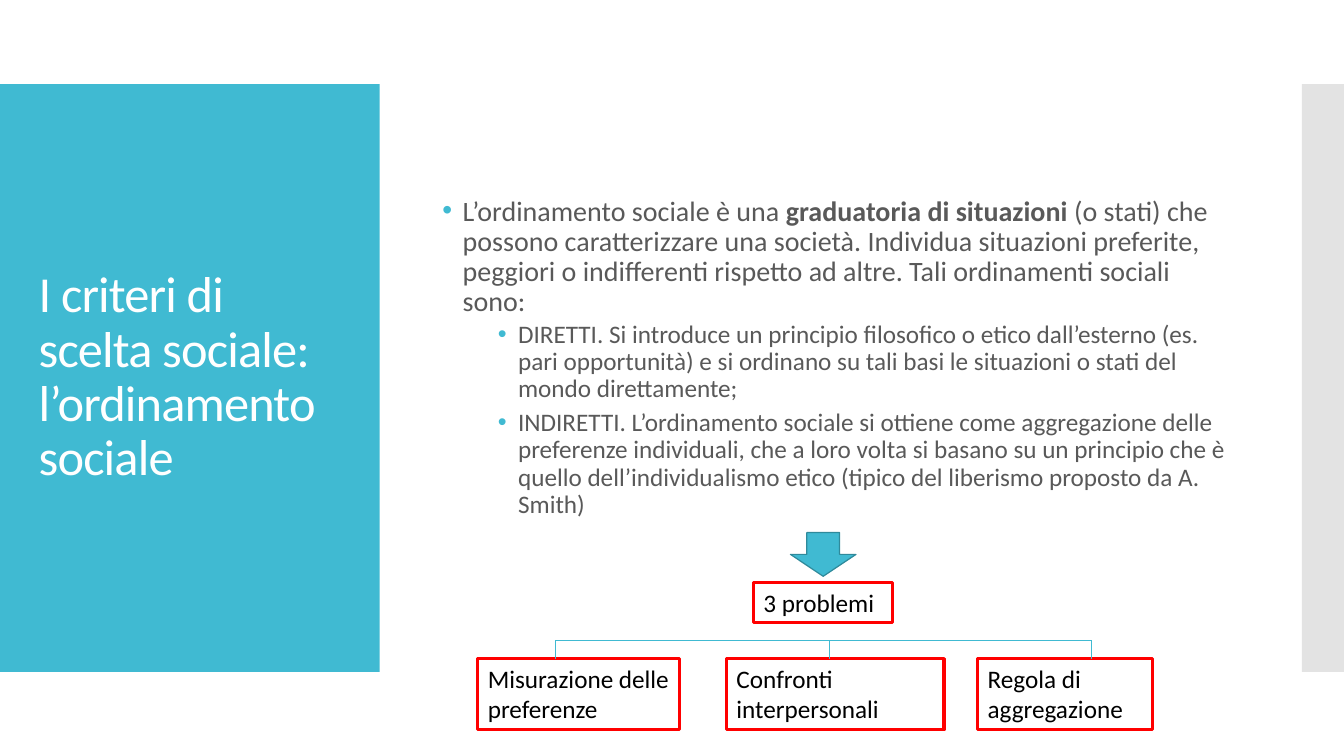
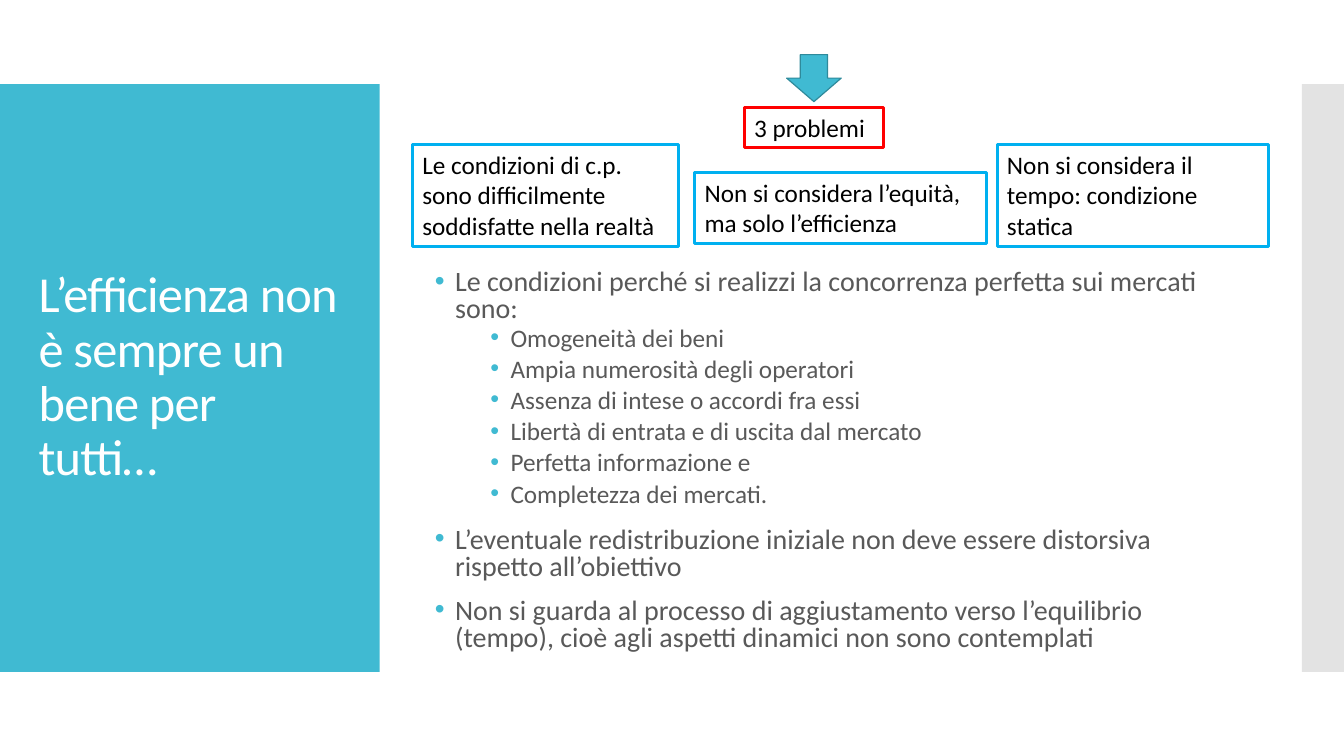
from dataclasses import dataclass

from lxml import etree
from pptx import Presentation
from pptx import util as u
from pptx.dml.color import RGBColor
from pptx.enum import shapes, text
from pptx.oxml import ns


@dataclass(frozen=True)
class Theme:
    """Colours, font and type sizes of the presentation."""
    accent: RGBColor = RGBColor(0x40, 0xBA, 0xD2)
    outline: RGBColor = RGBColor(0x2F, 0x8A, 0x9B)
    edge: RGBColor = RGBColor(0xC8, 0xC8, 0xC8)
    alert: RGBColor = RGBColor(0xFF, 0, 0)
    info: RGBColor = RGBColor(0, 0xB0, 0xF0)
    body: RGBColor = RGBColor(0x59, 0x59, 0x59)
    dark: RGBColor = RGBColor(0, 0, 0)
    light: RGBColor = RGBColor(0xFF, 0xFF, 0xFF)
    font: str = "Calibri"
    title_size: int = 36
    body_size: int = 20
    small_size: int = 18


COLS, ROWS = 160, 90
CELL = u.Inches(1) // 12


def cells(*values):
    """Turn grid columns or rows into lengths."""
    return [u.Emu(round(v * CELL)) for v in values]


def child(parent, tag, **attrs):
    """Append a drawing element with its attributes."""
    return etree.SubElement(parent, ns.qn(tag), attrs)


class Deck:
    """Hold the style and the current slide."""

    def __init__(self, theme):
        """Start an empty presentation on the grid."""
        self.theme = theme
        self.prs = Presentation()
        self.prs.slide_width, self.prs.slide_height = cells(COLS, ROWS)

    def slide(self, title):
        """Add a slide with its side bands and title."""
        self.s = self.prs.slides.add_slide(self.prs.slide_layouts[5])
        t = self.theme
        rect = shapes.MSO_SHAPE.RECTANGLE
        self.shape(rect, (0, 10, 45.2, 70), t.accent)
        edge = self.shape(rect, (155, 10, 5, 70), t.edge)
        color = edge._element.spPr.find(".//" + ns.qn("a:srgbClr"))
        child(color, "a:alpha", val="50000")
        sp = self.s.shapes.title
        self.s.shapes._spTree.append(sp._element)
        sp.left, sp.top, sp.width, sp.height = cells(3.4, 14.8, 38.6, 60.4)
        tf = sp.text_frame
        tf.text = title
        tf.word_wrap = True
        tf.auto_size = text.MSO_AUTO_SIZE.NONE
        tf.vertical_anchor = text.MSO_ANCHOR.MIDDLE
        p = tf.paragraphs[0]
        p.alignment = text.PP_ALIGN.LEFT
        p.line_spacing = 0.9
        self.style(p, t.title_size, t.light)
        for r in p.runs:
            r._r.get_or_add_rPr().set("spc", "-60")

    def style(self, p, size, color):
        """Format every run of a paragraph."""
        for r in p.runs:
            r.font.name, r.font.size = self.theme.font, u.Pt(size)
            r.font.color.rgb = color

    def shape(self, kind, at, fill, line=None):
        """Add a filled preset shape."""
        sp = self.s.shapes.add_shape(kind, *cells(*at))
        sp.shadow.inherit = False
        sp.fill.solid()
        sp.fill.fore_color.rgb = fill
        if line is None:
            sp.line.fill.background()
        else:
            sp.line.color.rgb, sp.line.width = line, u.Pt(0.85)
        return sp

    def box(self, at, label, color):
        """Add an outlined label."""
        sp = self.s.shapes.add_textbox(*cells(*at))
        sp.line.color.rgb, sp.line.width = color, u.Pt(2.25)
        tf = sp.text_frame
        tf.text = label
        tf.word_wrap = True
        tf.auto_size = text.MSO_AUTO_SIZE.SHAPE_TO_FIT_TEXT
        self.style(tf.paragraphs[0], self.theme.small_size, self.theme.dark)

    def problems(self, center, top, width, height):
        """Add the arrow pointing at the count of problems."""
        t = self.theme
        self.shape(shapes.MSO_SHAPE.DOWN_ARROW,
                   (center - width / 2, top, width, height), t.accent, t.outline)
        self.box((center - 8.3, top + height + 0.7, 16.6, 4.8), "3 problemi", t.alert)

    def line(self, x1, y1, x2, y2):
        """Add a thin straight connector."""
        sp = self.s.shapes.add_connector(
            shapes.MSO_CONNECTOR.STRAIGHT, *cells(x1, y1, x2, y2))
        sp.line.color.rgb, sp.line.width = self.theme.accent, u.Pt(0.75)
        child(sp._element.spPr, "a:effectLst")

    def tree(self, top, bottom, stems):
        """Join vertical stems under one horizontal line."""
        self.line(stems[0], top, stems[-1], top)
        for x in stems:
            self.line(x, top, x, bottom)

    def bullets(self, at, items, spacing):
        """Add a two-level list, with bold between asterisks."""
        t = self.theme
        tf = self.s.shapes.add_textbox(*cells(*at)).text_frame
        tf.word_wrap = True
        tf.vertical_anchor = text.MSO_ANCHOR.MIDDLE
        for i, (level, content) in enumerate(items):
            p = tf.add_paragraph() if i else tf.paragraphs[0]
            for j, part in enumerate(content.split("*")):
                r = p.add_run()
                r.text = part
                r.font.bold = j % 2 == 1
            self.style(p, t.small_size if level else t.body_size, t.body)
            p.level = level
            p.line_spacing = spacing
            p.space_before = u.Pt(2.5 if level else 12)
            p.space_after = u.Pt(2.5 if level else 0)
            pPr = p._p.get_or_add_pPr()
            pPr.set("marL", str(u.Inches(0.75 if level else 0.2)))
            pPr.set("indent", str(u.Inches(-0.2)))
            child(child(pPr, "a:buClr"), "a:srgbClr", val=str(t.accent))
            child(pPr, "a:buFont", typeface="Arial")
            child(pPr, "a:buChar", char="•")


def social_ordering(deck):
    """Build the slide on social ordering."""
    deck.slide("I criteri di scelta sociale: l’ordinamento sociale")
    deck.bullets((51.5, 9, 96, 67.2), [
        (0, "L’ordinamento sociale è una *graduatoria di situazioni *(o stati) che "
            "possono caratterizzare una società. Individua situazioni preferite, "
            "peggiori o indifferenti rispetto ad altre. Tali ordinamenti sociali sono:"),
        (1, "DIRETTI. Si introduce un principio filosofico o etico dall’esterno (es. "
            "pari opportunità) e si ordinano su tali basi le situazioni o stati del "
            "mondo direttamente;"),
        (1, "INDIRETTI. L’ordinamento sociale si ottiene come aggregazione delle "
            "preferenze individuali, che a loro volta si basano su un principio che è "
            "quello dell’individualismo etico (tipico del liberismo proposto da A. Smith)"),
    ], 0.9)
    deck.problems(98, 63.4, 7.8, 5.2)
    for left, width, label in [(56.9, 24, "Misurazione delle preferenze"),
                               (86.5, 25.9, "Confronti interpersonali"),
                               (116.4, 20.8, "Regola di aggregazione")]:
        deck.box((left, 78.4, width, 8.5), label, deck.theme.alert)
    deck.tree(76.2, 78.4, (66.1, 98.8, 130))


def efficiency(deck):
    """Build the slide on the limits of efficiency."""
    deck.slide("L’efficienza non è sempre un bene per tutti…")
    conditions = ["Omogeneità dei beni", "Ampia numerosità degli operatori",
                  "Assenza di intese o accordi fra essi",
                  "Libertà di entrata e di uscita dal mercato",
                  "Perfetta informazione e", "Completezza dei mercati."]
    deck.bullets((50.6, 31.2, 96, 47.5), [
        (0, "Le condizioni perché si realizzi la concorrenza perfetta sui mercati sono:"),
        *((1, c) for c in conditions),
        (0, "L’eventuale redistribuzione iniziale non deve essere distorsiva "
            "rispetto all’obiettivo"),
        (0, "Non si guarda al processo di aggiustamento verso l’equilibrio (tempo), "
            "cioè agli aspetti dinamici non sono contemplati"),
    ], 0.8)
    deck.problems(96.9, 6.5, 6.5, 5.6)
    for at, label in [
            ((49.1, 17.2, 31.7, 12.1),
             "Le condizioni di c.p. sono difficilmente soddisfatte nella realtà"),
            ((82.7, 20.5, 34.7, 8.5), "Non si considera l’equità, ma solo l’efficienza"),
            ((118.7, 17.2, 32.3, 12.1), "Non si considera il tempo: condizione statica")]:
        deck.box(at, label, deck.theme.info)


def main():
    """Build and save the presentation."""
    deck = Deck(Theme())
    social_ordering(deck)
    efficiency(deck)
    deck.prs.save("out.pptx")


if __name__ == "__main__":
    main()
